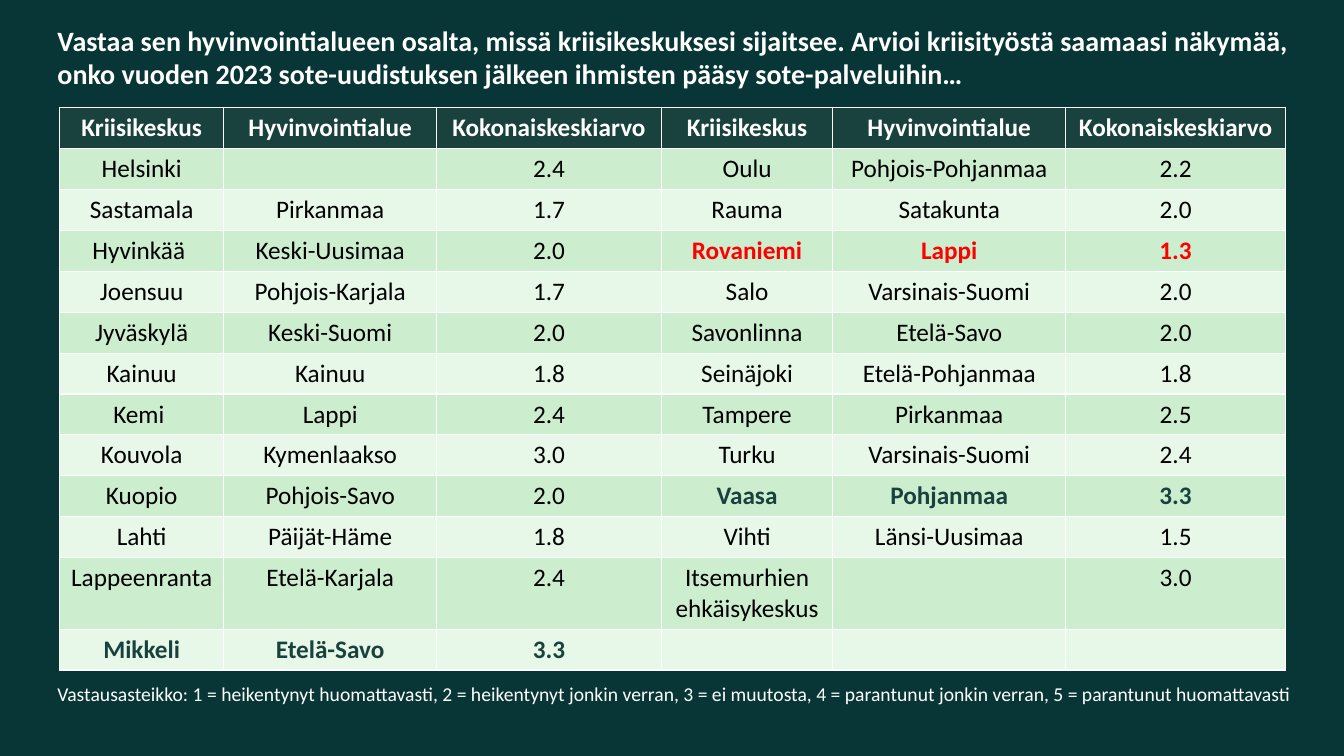
import pptx
import pptx.util
import pptx.dml.color
import pptx.enum.text
from dataclasses import dataclass

TITLE = ("Vastaa sen hyvinvointialueen osalta, missä kriisikeskuksesi sijaitsee. "
         "Arvioi kriisityöstä saamaasi näkymää, onko vuoden 2023 sote-uudistuksen "
         "jälkeen ihmisten pääsy sote-palveluihin…")
SCALE = ("Vastausasteikko: 1 = heikentynyt huomattavasti, 2 = heikentynyt jonkin verran, "
         "3 = ei muutosta, 4 = parantunut jonkin verran, 5 = parantunut huomattavasti")
HEAD = ("Kriisikeskus", "Hyvinvointialue", "Kokonaiskeskiarvo")
LEFT = [
    ("Helsinki", "", "2.4"),
    ("Sastamala", "Pirkanmaa", "1.7"),
    ("Hyvinkää ", "Keski-Uusimaa", "2.0"),
    ("Joensuu", "Pohjois-Karjala", "1.7"),
    ("Jyväskylä", "Keski-Suomi", "2.0"),
    ("Kainuu", "Kainuu", "1.8"),
    ("Kemi ", "Lappi", "2.4"),
    ("Kouvola", "Kymenlaakso", "3.0"),
    ("Kuopio", "Pohjois-Savo", "2.0"),
    ("Lahti", "Päijät-Häme", "1.8"),
    ("Lappeenranta", "Etelä-Karjala", "2.4"),
    ("Mikkeli", "Etelä-Savo", "3.3"),
]
RIGHT = [
    ("Oulu", "Pohjois-Pohjanmaa", "2.2"),
    ("Rauma", "Satakunta", "2.0"),
    ("Rovaniemi", "Lappi", "1.3"),
    ("Salo", "Varsinais-Suomi", "2.0"),
    ("Savonlinna", "Etelä-Savo", "2.0"),
    ("Seinäjoki", "Etelä-Pohjanmaa", "1.8"),
    ("Tampere", "Pirkanmaa", "2.5"),
    ("Turku", "Varsinais-Suomi", "2.4"),
    ("Vaasa", "Pohjanmaa", "3.3"),
    ("Vihti", "Länsi-Uusimaa", "1.5"),
    ("Itsemurhien ehkäisykeskus", "", "3.0"),
    ("", "", ""),
]
COLS = (1.63, 2.11, 2.23, 1.7, 2.31, 2.18)
WIDE, HIGH = 13.33, 7.5


@dataclass(frozen=True)
class Theme:
    font: str = "Calibri"
    back: str = "083535"
    deep: str = "19413D"
    light: str = "FFFFFF"
    ink: str = "000000"
    low: str = "FF0000"
    bands: tuple = ("CCEECE", "E7F7E8")
    title: int = 20
    body: int = 18
    note: int = 14


LOOK = Theme()
inch = pptx.util.Inches


def paint(fill, tone):
    fill.solid()
    fill.fore_color.rgb = pptx.dml.color.RGBColor.from_string(tone)


def write(frame, text, size, tone, bold=False, align=pptx.enum.text.PP_ALIGN.LEFT):
    frame.text = text
    para = frame.paragraphs[0]
    para.alignment = align
    font = para.font
    font.name, font.size, font.bold = LOOK.font, pptx.util.Pt(size), bold
    font.color.rgb = pptx.dml.color.RGBColor.from_string(tone)


def place(shape, top, high):
    shape.left, shape.top = inch(0.47), inch(top)
    shape.width, shape.height = inch(12.57), inch(high)
    frame = shape.text_frame
    frame.word_wrap = True
    frame.auto_size = pptx.enum.text.MSO_AUTO_SIZE.NONE
    frame.vertical_anchor = pptx.enum.text.MSO_ANCHOR.TOP
    return frame


def style(score, scores):
    if score == min(scores):
        return LOOK.low, True
    if score == max(scores):
        return LOOK.deep, True
    return LOOK.ink, False


def fill_row(table, row, texts, band, looks):
    for col, (text, (tone, bold)) in enumerate(zip(texts, looks)):
        cell = table.cell(row, col)
        paint(cell.fill, band)
        write(cell.text_frame, text, LOOK.body, tone, bold,
              pptx.enum.text.PP_ALIGN.CENTER)


def add_scores(slide):
    count = len(LEFT) + 1
    high = inch(5.27)
    table = slide.shapes.add_table(count, len(COLS), inch(0.59), inch(1.07),
                                   inch(sum(COLS)), high).table
    table.horz_banding = False
    for col, wide in zip(table.columns, COLS):
        col.width = inch(wide)
    for row in table.rows:
        row.height = high // count
    scores = [item[-1] for item in LEFT + RIGHT if item[-1]]
    fill_row(table, 0, HEAD * 2, LOOK.deep, [(LOOK.light, True)] * len(COLS))
    for row, pair in enumerate(zip(LEFT, RIGHT), 1):
        texts = pair[0] + pair[1]
        looks = [style(half[-1], scores) if half[-1] else (LOOK.ink, False)
                 for half in pair for _ in half]
        fill_row(table, row, texts, LOOK.bands[(row - 1) % 2], looks)


def main():
    deck = pptx.Presentation()
    deck.slide_width, deck.slide_height = inch(WIDE), inch(HIGH)
    slide = deck.slides.add_slide(deck.slide_layouts.get_by_name("Title Only"))
    paint(slide.background.fill, LOOK.back)
    add_scores(slide)
    write(place(slide.shapes.title, 0.18, 0.8), TITLE, LOOK.title, LOOK.light, True)
    note = slide.shapes.add_textbox(0, 0, 0, 0)
    write(place(note, 6.72, 0.34), SCALE, LOOK.note, LOOK.light)
    deck.save("out.pptx")


if __name__ == "__main__":
    main()
